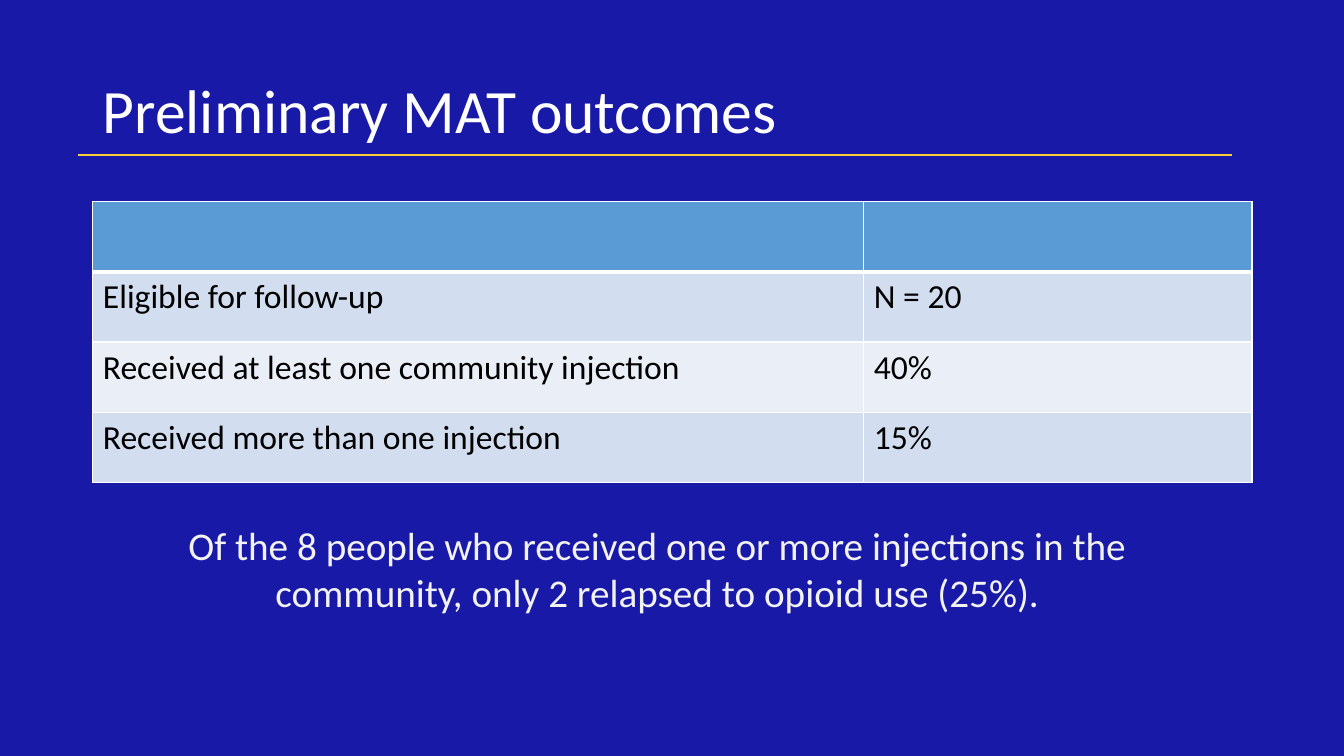
from dataclasses import dataclass

from lxml import etree
from pptx import Presentation
from pptx import util as u
from pptx.dml.color import RGBColor
from pptx.enum import shapes, text
from pptx.oxml import ns

FONT = "Calibri"
COLORS = {
    "background": "1919A7",
    "title": "FFFFFF",
    "note": "F2F2F2",
    "rule": "FFCF37",
    "header": "5B9BD5",
    "band_dark": "D2DEEF",
    "band_light": "EAEFF7",
    "cell_text": "000000",
    "border": "FFFFFF",
}


@dataclass(frozen=True)
class Label:
    words: str
    left: float
    top: float
    width: float
    height: float
    size: float
    color: str
    align: text.PP_ALIGN
    anchor: text.MSO_ANCHOR
    spacing: float = 1.0


@dataclass(frozen=True)
class Outcome:
    measure: str
    result: str
    fill: str


LABELS = [
    Label("Preliminary MAT outcomes", 2.34, 1.02, 29.21, 3.68, 44, "title",
          text.PP_ALIGN.LEFT, text.MSO_ANCHOR.MIDDLE, 0.9),
    Label("Of the 8 people who received one or more injections in the "
          "community, only 2 relapsed to opioid use (25%).",
          4.29, 13, 24.54, 2.64, 28, "note",
          text.PP_ALIGN.CENTER, text.MSO_ANCHOR.TOP),
]
OUTCOMES = [
    Outcome("", "", "header"),
    Outcome("Eligible for follow-up", "N = 20", "band_dark"),
    Outcome("Received at least one community injection", "40%", "band_light"),
    Outcome("Received more than one injection", "15%", "band_dark"),
]
COLUMN_WIDTHS = [19.43, 9.78]
ROW_HEIGHT = 1.77


def rgb(name: str) -> RGBColor:
    return RGBColor.from_string(COLORS[name])


def add_span(para, words: str, size: float, color: str) -> None:
    span = para.add_run()
    span.text = words
    span.font.name = FONT
    span.font.size = u.Pt(size)
    span.font.color.rgb = rgb(color)


def add_label(page, label: Label) -> None:
    box = page.shapes.add_textbox(u.Cm(label.left), u.Cm(label.top),
                                  u.Cm(label.width), u.Cm(label.height))
    frame = box.text_frame
    frame.word_wrap = True
    frame.vertical_anchor = label.anchor
    para = frame.paragraphs[0]
    para.alignment = label.align
    para.line_spacing = label.spacing
    add_span(para, label.words, label.size, label.color)


def add_border(cell, side: str, points: float) -> None:
    properties = cell._tc.get_or_add_tcPr()
    line = etree.SubElement(properties, ns.qn(f"a:ln{side}"), w=str(u.Pt(points)))
    fill = etree.SubElement(line, ns.qn("a:solidFill"))
    etree.SubElement(fill, ns.qn("a:srgbClr"), val=COLORS["border"])


def add_outcomes(page, outcomes: list[Outcome]) -> None:
    frame = page.shapes.add_table(
        len(outcomes), len(COLUMN_WIDTHS), u.Cm(2.34), u.Cm(5.08),
        u.Cm(sum(COLUMN_WIDTHS)), u.Cm(ROW_HEIGHT * len(outcomes)))
    table = frame.table
    for column, width in zip(table.columns, COLUMN_WIDTHS):
        column.width = u.Cm(width)
    for index, outcome in enumerate(outcomes):
        table.rows[index].height = u.Cm(ROW_HEIGHT)
        # The edge between header and body is thicker
        edges = {"L": 1, "R": 1, "T": 3 if index == 1 else 1,
                 "B": 3 if index == 0 else 1}
        for cell, words in zip(table.rows[index].cells,
                               (outcome.measure, outcome.result)):
            for side, points in edges.items():
                add_border(cell, side, points)
            cell.fill.solid()
            cell.fill.fore_color.rgb = rgb(outcome.fill)
            if words:
                add_span(cell.text_frame.paragraphs[0], words, 24, "cell_text")


def add_rule(page, left: float, right: float, top: float) -> None:
    rule = page.shapes.add_connector(shapes.MSO_CONNECTOR.STRAIGHT, u.Cm(left),
                                     u.Cm(top), u.Cm(right), u.Cm(top))
    rule.line.color.rgb = rgb("rule")
    rule.line.width = u.Pt(1.25)
    etree.SubElement(rule._element.spPr, ns.qn("a:effectLst"))


def main() -> None:
    deck = Presentation()
    deck.slide_width, deck.slide_height = u.Cm(33.87), u.Cm(19.05)
    page = deck.slides.add_slide(deck.slide_layouts[6])
    page.background.fill.solid()
    page.background.fill.fore_color.rgb = rgb("background")

    # Title and closing note
    for label in LABELS:
        add_label(page, label)

    # Outcome table
    add_outcomes(page, OUTCOMES)

    # Rule under the title
    add_rule(page, 1.96, 31.06, 3.91)

    deck.save("out.pptx")


if __name__ == "__main__":
    main()
